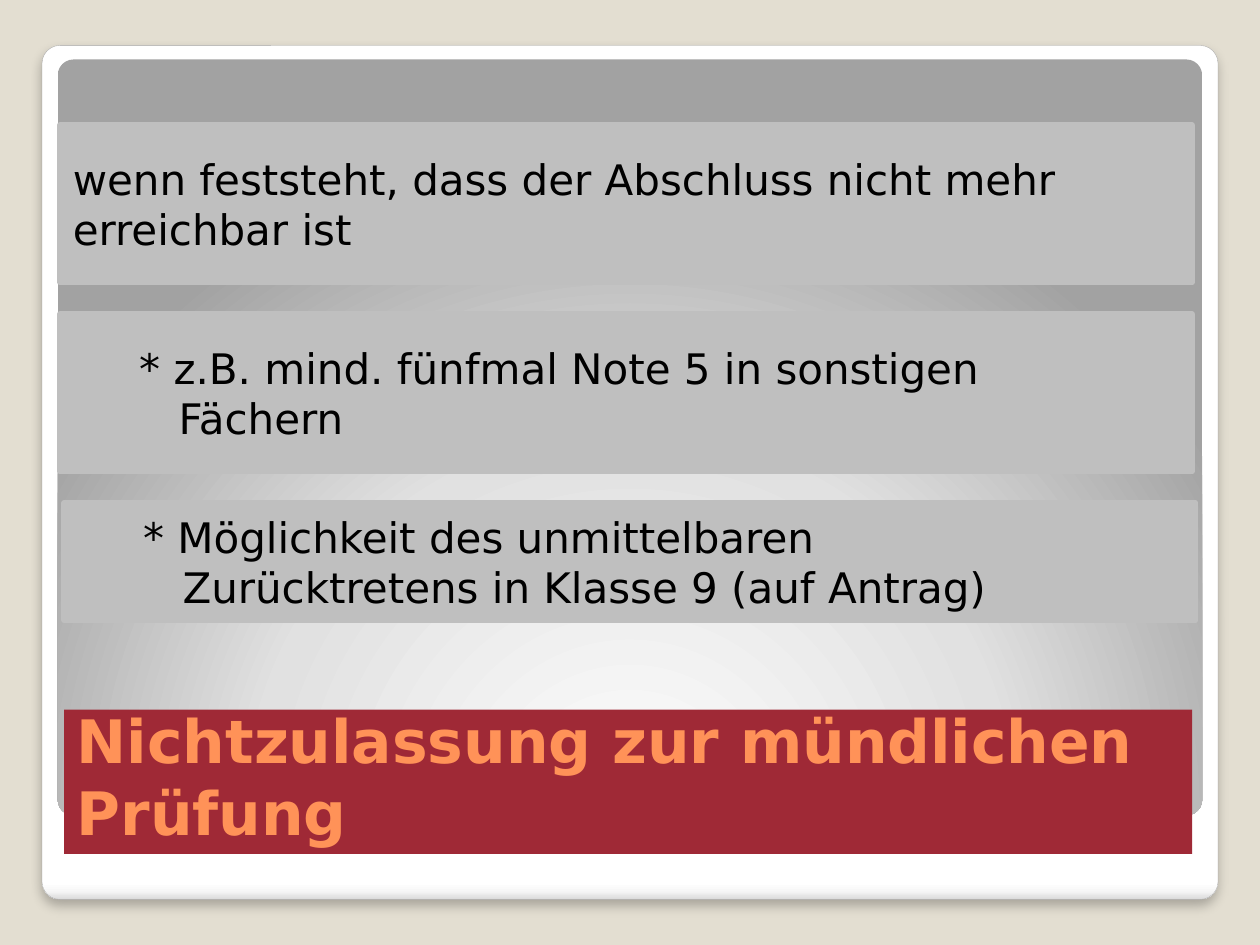
"""Build the slide on refusal of admission to the oral exam."""
from lxml import etree
from pptx import Presentation
from pptx.dml import color
from pptx.enum import shapes, text
from pptx.oxml import ns
from pptx.util import Pt

FONT = "DejaVu Sans"


def rgb(value):
    """Return the colour for a hex string."""
    return color.RGBColor.from_string(value)


def add_node(parent, tag, **values):
    """Append a drawing element with attributes."""
    node = etree.SubElement(parent, ns.qn("a:" + tag))
    for name, value in values.items():
        node.set(name, str(value))
    return node


def set_gradient(panel, stops, circle=None):
    """Give a panel a gradient, downward or around a circle's centre."""
    panel.fill.gradient()
    gradient = panel.element.spPr.find(ns.qn("a:gradFill"))
    for child in list(gradient):
        gradient.remove(child)
    stop_list = add_node(gradient, "gsLst")
    for percent, value in stops:
        stop = add_node(stop_list, "gs", pos=percent * 1000)
        add_node(stop, "srgbClr", val=value)
    if circle:
        route = add_node(gradient, "path", path="circle")
        add_node(route, "fillToRect", **circle)
    else:
        add_node(gradient, "lin", ang=5400000, scaled=0)


def add_panel(page, bounds, stops, circle=None):
    """Add a rounded background panel."""
    panel = page.shapes.add_shape(
        shapes.MSO_SHAPE.ROUNDED_RECTANGLE, *map(Pt, bounds))
    panel.adjustments[0] = 0.021
    panel.shadow.inherit = False
    panel.line.fill.background()
    set_gradient(panel, stops, circle)
    return panel


def add_shadow(panel):
    """Put a soft shadow below a panel."""
    effects = panel.element.spPr.find(ns.qn("a:effectLst"))
    shadow = add_node(effects, "outerShdw", blurRad=Pt(6), dist=Pt(4),
                      dir=5400000, algn="t", rotWithShape=0)
    shade = add_node(shadow, "srgbClr", val="000000")
    add_node(shade, "alpha", val=25000)


def write_text(box, words, anchor, formats):
    """Write one left-aligned paragraph into a box."""
    frame = box.text_frame
    frame.text = words
    settings = {
        "word_wrap": True, "auto_size": text.MSO_AUTO_SIZE.NONE,
        "vertical_anchor": anchor,
        "margin_left": Pt(7.2), "margin_right": Pt(7.2),
        "margin_top": Pt(3.6), "margin_bottom": Pt(3.6),
    }
    for name, value in settings.items():
        setattr(frame, name, value)
    para = frame.paragraphs[0]
    para.alignment = text.PP_ALIGN.LEFT
    for span in para.runs:
        span.font.color.rgb = rgb(formats["color"])
        for name in ("name", "size", "bold"):
            setattr(span.font, name, formats[name])
    return para


def add_statement(page, bounds, words, hanging):
    """Add a grey box, its text with a hanging indent if asked."""
    box = page.shapes.add_shape(shapes.MSO_SHAPE.RECTANGLE, *map(Pt, bounds))
    box.shadow.inherit = False
    box.fill.solid()
    box.fill.fore_color.rgb = rgb("BFBFBF")
    box.line.color.rgb = rgb("BFBFBF")
    box.line.width = Pt(3.35)
    formats = {"name": FONT, "size": Pt(24), "bold": False, "color": "000000"}
    para = write_text(box, words, text.MSO_ANCHOR.MIDDLE, formats)
    if hanging:
        properties = para._p.get_or_add_pPr()
        properties.set("marL", str(Pt(60.5)))
        properties.set("indent", str(Pt(-22.5)))


def place_title(page, bounds, words):
    """Format the title placeholder and bring it to the front."""
    title = page.shapes.title
    for name, value in zip(("left", "top", "width", "height"), bounds):
        setattr(title, name, Pt(value))
    title.fill.solid()
    title.fill.fore_color.rgb = rgb("9F2936")
    formats = {"name": FONT, "size": Pt(34.2), "bold": True, "color": "FF9258"}
    write_text(title, words, text.MSO_ANCHOR.BOTTOM, formats)
    title.element.getparent().append(title.element)


def main():
    """Build and save the deck."""
    deck = Presentation()
    deck.slide_width, deck.slide_height = Pt(720), Pt(540)
    page = deck.slides.add_slide(deck.slide_layouts[5])
    page.background.fill.solid()
    page.background.fill.fore_color.rgb = rgb("E3DED1")

    card = add_panel(page, (24, 26, 672, 488), [
        (0, "FFFFFF"), (98, "FFFFFF"), (99, "F7F7F7"), (100, "DADADA")])
    card.line.color.rgb = rgb("A4A4A4")
    card.line.width = Pt(0.16)
    add_shadow(card)
    add_panel(page, (33, 34, 654, 432),
              [(0, "FFFFFF"), (55, "E1E1E1"), (100, "A2A2A2")],
              {"l": 50000, "t": 175000, "r": 50000, "b": -75000})
    place_title(page, (36.7, 405.5, 644.5, 82.5),
                "Nichtzulassung zur mündlichen Prüfung")

    statements = [
        (34.5, 90, False,
         "wenn feststeht, dass der Abschluss nicht mehr erreichbar ist"),
        (34.5, 90, True,
         "* z.B. mind. fünfmal Note 5 in sonstigen\vFächern"),
        (36.7, 67, True,
         "* Möglichkeit des unmittelbaren\v"
         "Zurücktretens in Klasse 9 (auf Antrag)"),
    ]
    for row, (left, height, hanging, words) in enumerate(statements):
        bounds = (left, 71.5 + row * 108, 646.5, height)
        add_statement(page, bounds, words, hanging)
    deck.save("out.pptx")


if __name__ == "__main__":
    main()
